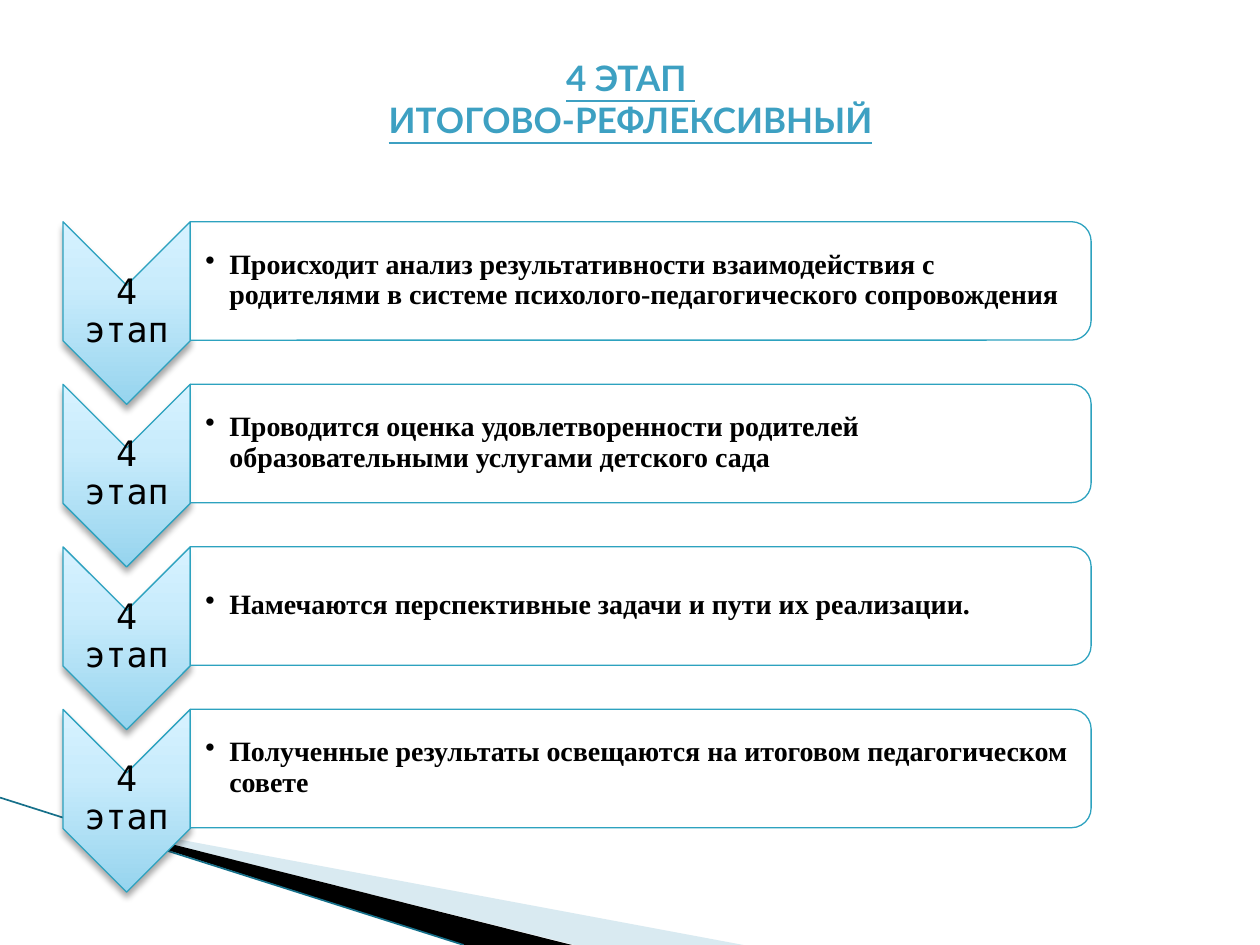
from lxml import etree
from pptx import Presentation
from pptx import util as u
from pptx.dml.color import RGBColor
from pptx.enum import shapes, text
from pptx.oxml import parse_xml
from pptx.oxml.ns import nsdecls, qn

TEAL = "2DA2BF"
FIRST_TOP, STEP_GAP = 1.76, 1.29
CHEVRON_LEFT, CHEVRON_WIDTH, CHEVRON_HEIGHT = 0.5, 1.01, 1.45
BAR_LEFT, BAR_WIDTH, BAR_HEIGHT = 1.51, 7.15, 0.94
STEPS = [
    "Происходит анализ результативности взаимодействия с родителями "
    "в системе психолого-педагогического сопровождения",
    "Проводится оценка удовлетворенности родителей образовательными услугами детского сада",
    "Намечаются перспективные задачи и пути их реализации.",
    "Полученные результаты освещаются на итоговом педагогическом совете",
]


def color(value):
    return RGBColor.from_string(value)


def set_alpha(shape, percent):
    fill_color = shape._element.spPr.find(qn("a:solidFill"))[0]
    etree.SubElement(fill_color, qn("a:alpha"), val=str(percent * 1000))


def add_wedge(page, points, fill, alpha=100):
    points = [(u.Inches(x), u.Inches(y)) for x, y in points]
    builder = page.shapes.build_freeform(*points[0])
    builder.add_line_segments(points[1:])
    wedge = builder.convert_to_shape()
    wedge.shadow.inherit = False
    wedge.fill.solid()
    wedge.fill.fore_color.rgb = color(fill)
    wedge.line.fill.background()
    if alpha < 100:
        set_alpha(wedge, alpha)


def add_line(page, start, end, line_color, width):
    ends = [u.Inches(value) for value in (*start, *end)]
    line = page.shapes.add_connector(shapes.MSO_CONNECTOR.STRAIGHT, *ends)
    line.line.color.rgb = color(line_color)
    line.line.width = u.Pt(width)
    etree.SubElement(line._element.spPr, qn("a:effectLst"))


def add_turned_shape(page, kind, left, top, width, height):
    """Add a shape turned by 90 degrees that covers the given area."""
    x = left + (width - height) / 2
    y = top + (height - width) / 2
    shape = page.shapes.add_shape(kind, *map(u.Inches, (x, y, height, width)))
    shape.rotation = 90
    shape.shadow.inherit = False
    shape.fill.solid()
    shape.fill.fore_color.rgb = color("FFFFFF")
    shape.line.color.rgb = color(TEAL)
    shape.line.width = u.Pt(0.75)
    return shape


def add_chevron(page, top):
    chevron = add_turned_shape(page, shapes.MSO_SHAPE.CHEVRON, CHEVRON_LEFT, top,
                               CHEVRON_WIDTH, CHEVRON_HEIGHT)
    properties = chevron._element.spPr
    stops = "".join(
        f'<a:gs pos="{position * 1000}"><a:srgbClr val="{value}"/></a:gs>'
        for position, value in [(0, "96D4EE"), (65, "C9ECFC"), (100, "D7F2FF")])
    gradient = parse_xml(
        f'<a:gradFill {nsdecls("a")} rotWithShape="0"><a:gsLst>{stops}</a:gsLst>'
        '<a:lin ang="16200000" scaled="0"/></a:gradFill>')
    properties.replace(properties.find(qn("a:solidFill")), gradient)
    properties.find(qn("a:effectLst")).append(parse_xml(
        f'<a:outerShdw {nsdecls("a")} blurRad="{u.Pt(4)}" dist="{u.Pt(3)}" dir="5400000" '
        'rotWithShape="0"><a:srgbClr val="000000"><a:alpha val="35000"/></a:srgbClr>'
        '</a:outerShdw>'))


def add_text(page, left, top, width, height, words, font, size, inset=0.01):
    box = page.shapes.add_textbox(*map(u.Inches, (left, top, width, height)))
    frame = box.text_frame
    frame.word_wrap = True
    frame.vertical_anchor = text.MSO_ANCHOR.MIDDLE
    frame.margin_left = u.Inches(inset)
    frame.margin_right = frame.margin_top = frame.margin_bottom = u.Inches(0.01)
    para = frame.paragraphs[0]
    para.text = words
    para.line_spacing = 0.9
    para.font.name = font
    para.font.size = u.Pt(size)
    para.font.color.rgb = color("000000")
    return para


def add_bullet(para):
    properties = para._p.get_or_add_pPr()
    properties.set("marL", str(u.Inches(0.19)))
    properties.set("indent", str(u.Inches(-0.19)))
    bullet = parse_xml(f'<a:buChar {nsdecls("a")} char="•"/>')
    properties.find(qn("a:lnSpc")).addnext(bullet)


def add_step(page, top, words):
    add_chevron(page, top)
    label = add_text(page, CHEVRON_LEFT, top + 0.5, CHEVRON_WIDTH, 0.43,
                     "4 этап", "DejaVu Sans Mono", 20)
    label.alignment = text.PP_ALIGN.CENTER
    bar = add_turned_shape(page, shapes.MSO_SHAPE.ROUND_2_SAME_RECTANGLE, BAR_LEFT, top,
                           BAR_WIDTH, BAR_HEIGHT)
    set_alpha(bar, 90)
    para = add_text(page, BAR_LEFT, top + 0.04, 7.11, 0.85, words,
                    "Times New Roman", 16, inset=0.12)
    add_bullet(para)
    para.font.bold = True


def set_title(page, lines):
    title = page.shapes.title
    title.left, title.top, title.width, title.height = map(u.Inches, (0.33, 0.2, 9.35, 1.17))
    frame = title.text_frame
    frame.text = "\n".join(lines)
    frame.auto_size = text.MSO_AUTO_SIZE.NONE
    frame.vertical_anchor = text.MSO_ANCHOR.MIDDLE
    for para in frame.paragraphs:
        para.alignment = text.PP_ALIGN.CENTER
        para.space_before = u.Pt(0)
        para.font.name = "Lato"
        para.font.size = u.Pt(20)
        para.font.bold = True
        para.font.underline = True
        para.font.color.rgb = color("3DA0C2")


def main():
    deck = Presentation()
    deck.slide_width, deck.slide_height = u.Inches(10), u.Inches(7.5)
    page = deck.slides.add_slide(deck.slide_layouts[5])
    set_title(page, ["4 ЭТАП ", "ИТОГОВО-РЕФЛЕКСИВНЫЙ"])

    # Corner decoration
    add_wedge(page, [(0.55, 6.5), (5.9, 7.5), (4.56, 7.5)], "A0CBDC", 40)
    add_wedge(page, [(0.53, 6.49), (4.54, 7.5), (3.68, 7.5)], "000000")
    add_line(page, (0, 6.33), (3.68, 7.5), "16708A", 0.95)

    # Steps
    for index, words in enumerate(STEPS):
        add_step(page, FIRST_TOP + index * STEP_GAP, words)

    deck.save("out.pptx")


if __name__ == "__main__":
    main()
